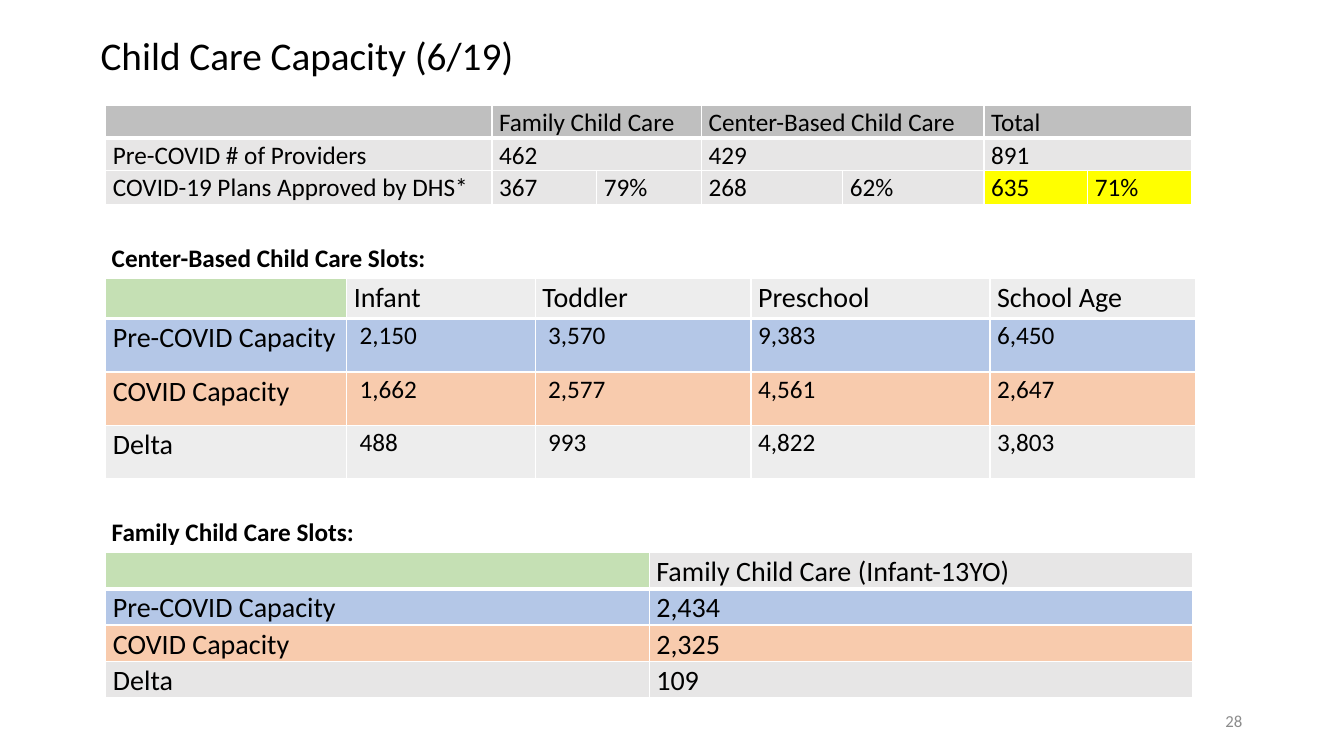
from lxml import etree
from pptx import Presentation
from pptx.dml.color import RGBColor
from pptx.enum.text import MSO_ANCHOR, PP_ALIGN
from pptx.oxml.ns import qn
from pptx.util import Inches, Pt

LEFT, RIGHT = PP_ALIGN.LEFT, PP_ALIGN.RIGHT
TOP, MIDDLE = MSO_ANCHOR.TOP, MSO_ANCHOR.MIDDLE

BLACK = RGBColor(0x00, 0x00, 0x00)
GRAY = RGBColor(0x8C, 0x8C, 0x8C)
SILVER = RGBColor(0xBF, 0xBF, 0xBF)
PALE = RGBColor(0xE7, 0xE6, 0xE6)
LIGHT = RGBColor(0xED, 0xED, 0xED)
GREEN = RGBColor(0xC5, 0xE0, 0xB4)
BLUE = RGBColor(0xB4, 0xC7, 0xE7)
ORANGE = RGBColor(0xF8, 0xCB, 0xAD)
YELLOW = RGBColor(0xFF, 0xFF, 0x00)
WHITE = RGBColor(0xFF, 0xFF, 0xFF)

LABELS = [
    ("Child Care Capacity (6/19)", (0.9, 0.26, 10.82, 0.84), 28, False, BLACK, LEFT, TOP),
    ("Center-Based Child Care Slots:", (1.01, 2.36, 8.74, 0.4), 18, True, BLACK, LEFT, TOP),
    ("Family Child Care Slots:", (1.01, 5.07, 8.74, 0.4), 18, True, BLACK, LEFT, TOP),
    ("28", (9.42, 6.95, 3, 0.4), 12, False, GRAY, RIGHT, MIDDLE),
]

TABLES = [
    {
        "top": 1.05,
        "cols": [3.83, 1.04, 1.04, 1.4, 1.4, 1.03, 1.03],
        "rows": [0.32, 0.32, 0.34],
        "text": [
            ["", "Family Child Care", None, "Center-Based Child Care", None, "Total", None],
            ["Pre-COVID # of Providers", "462", None, "429", None, "891", None],
            ["COVID-19 Plans Approved by DHS*", "367", "79%", "268", "62%", "635", "71%"],
        ],
        "fills": [SILVER, PALE, PALE],
        "marks": {(2, 5): YELLOW, (2, 6): YELLOW},
        "head": 18,
        "body": 18,
    },
    {
        "top": 2.76,
        "cols": [2.39, 1.87, 2.14, 2.37, 2.04],
        "rows": [0.4, 0.53, 0.53, 0.53],
        "text": [
            ["", "Infant", "Toddler", "Preschool", "School Age"],
            ["Pre-COVID Capacity", " 2,150", " 3,570", "9,383", "6,450"],
            ["COVID Capacity", " 1,662", " 2,577", "4,561", "2,647"],
            ["Delta", " 488", " 993", "4,822", "3,803"],
        ],
        "fills": [LIGHT, BLUE, ORANGE, LIGHT],
        "marks": {(0, 0): GREEN},
        "head": 20,
        "body": 18,
    },
    {
        "top": 5.48,
        "cols": [5.39, 5.39],
        "rows": [0.36] * 4,
        "text": [
            ["", "Family Child Care (Infant-13YO)"],
            ["Pre-COVID Capacity", "2,434"],
            ["COVID Capacity", "2,325"],
            ["Delta", "109"],
        ],
        "fills": [PALE, BLUE, ORANGE, PALE],
        "marks": {(0, 0): GREEN},
        "head": 20,
        "body": 20,
    },
]

SIDE = 1.05
INSETS = {
    "margin_left": Inches(0.07),
    "margin_right": Inches(0.07),
    "margin_top": 0,
    "margin_bottom": 0,
}


def apply(item, values):
    for key, value in values.items():
        setattr(item, key, value)


def write(frame, text, size, bold, color):
    par = frame.paragraphs[0]
    run = par.add_run()
    run.text = text
    apply(run.font, {"name": "Calibri", "size": Pt(size), "bold": bold})
    run.font.color.rgb = color
    return par


def add_label(slide, text, box, size, bold, color, align, anchor):
    frame = slide.shapes.add_textbox(*map(Inches, box)).text_frame
    apply(frame, {"word_wrap": True, "vertical_anchor": anchor})
    write(frame, text, size, bold, color).alignment = align


def add_edges(cell, row):
    props = cell._tc.get_or_add_tcPr()
    widths = {"L": 1, "R": 1, "T": 3 if row == 1 else 1, "B": 3 if row == 0 else 1}
    for edge, width in widths.items():
        line = etree.SubElement(props, qn("a:ln" + edge), w=str(Pt(width)))
        fill = etree.SubElement(line, qn("a:solidFill"))
        etree.SubElement(fill, qn("a:srgbClr"), val=str(WHITE))


def add_grid(slide, data):
    cols, rows = data["cols"], data["rows"]
    box = (SIDE, data["top"], sum(cols), sum(rows))
    table = slide.shapes.add_table(len(rows), len(cols), *map(Inches, box)).table
    apply(table, {"first_row": False, "horz_banding": False})
    for col, width in zip(table.columns, cols):
        col.width = Inches(width)
    for row, height in zip(table.rows, rows):
        row.height = Inches(height)
    for r, line in enumerate(data["text"]):
        for c, text in enumerate(line):
            cell = table.cell(r, c)
            apply(cell, INSETS)
            add_edges(cell, r)
            cell.fill.solid()
            cell.fill.fore_color.rgb = data["marks"].get((r, c), data["fills"][r])
            if text is None:
                table.cell(r, c - 1).merge(cell)
            elif text:
                size = data["head"] if r == 0 or c == 0 else data["body"]
                par = write(cell.text_frame, text, size, False, BLACK)
                par.line_spacing = 1.07


def main():
    deck = Presentation()
    apply(deck, {"slide_width": Inches(13.33), "slide_height": Inches(7.5)})
    slide = deck.slides.add_slide(deck.slide_layouts[6])
    for label in LABELS:
        add_label(slide, *label)
    for data in TABLES:
        add_grid(slide, data)
    deck.save("out.pptx")


if __name__ == "__main__":
    main()
